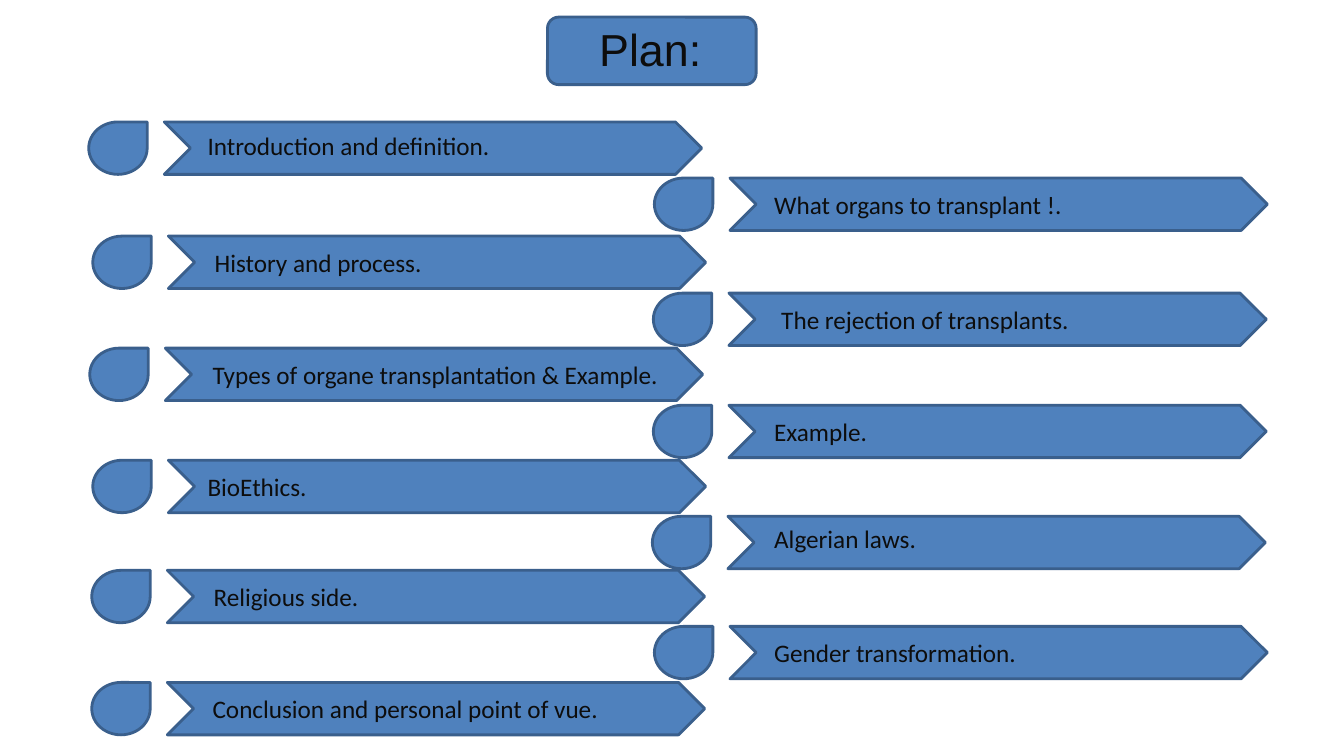
from pptx import Presentation
from pptx.dml.color import RGBColor
from pptx.enum.shapes import MSO_SHAPE
from pptx.enum.text import MSO_ANCHOR, PP_ALIGN
from pptx.util import Inches, Pt

# Content: label, left of row, nudge from the even row step, text left, text drop
TITLE = "Plan:"
ITEMS = [
    ("Introduction and definition.", 0.88, 0, 1.96, 0.03),
    ("What organs to transplant !.", 6.49, 0, 7.58, 0.06),
    ("History and process.", 0.92, 0.02, 2.03, 0.06),
    ("The rejection of transplants.", 6.48, 0.03, 7.65, 0.06),
    ("Types of organe transplantation & Example.", 0.89, 0.02, 2.01, 0.06),
    ("Example.", 6.48, 0.03, 7.58, 0.06),
    ("BioEthics.", 0.92, 0.02, 1.96, 0.06),
    ("Algerian laws.", 6.47, 0.02, 7.58, 0.02),
    ("Religious side.", 0.91, 0, 2.02, 0.06),
    ("Gender transformation.", 6.49, 0, 7.58, 0.06),
    ("Conclusion and personal point of vue.", 0.91, 0, 2.01, 0.06),
]
FILL, EDGE, INK = "4F81BD", "3A5F8C", "0D0D0D"
FIRST, LAST = 1.21, 6.77
STEP = (LAST - FIRST) / (len(ITEMS) - 1)
HIGH, DROP, BAR, SHIFT = 0.52, 0.58, 5.33, 0.75


def color(code):
    return RGBColor.from_string(code)


def shape(slide, kind, *box):
    item = slide.shapes.add_shape(kind, *map(Inches, box))
    item.shadow.inherit = False
    item.fill.solid()
    item.fill.fore_color.rgb = color(FILL)
    item.line.color.rgb = color(EDGE)
    item.line.width = Pt(2)


def label(slide, text, size, font, *box):
    frame = slide.shapes.add_textbox(*map(Inches, box)).text_frame
    frame.word_wrap = True
    frame.text = text
    face = frame.paragraphs[0].runs[0].font
    face.size, face.name = Pt(size), font
    face.color.rgb = color(INK)
    return frame


def main():
    deck = Presentation()
    deck.slide_width, deck.slide_height = Inches(13.33), Inches(7.5)
    slide = deck.slides.add_slide(deck.slide_layouts[6])

    # Plan rows, alternating left and right
    for row, (text, left, nudge, start, drop) in enumerate(ITEMS):
        top = FIRST + row * STEP + nudge
        shape(slide, MSO_SHAPE.TEAR, left, top, DROP, HIGH)
        shape(slide, MSO_SHAPE.CHEVRON, left + SHIFT, top, BAR, HIGH)
        label(slide, text, 18, "Calibri", start, top + drop, 4.75, 0.4)

    # Title
    shape(slide, MSO_SHAPE.ROUNDED_RECTANGLE, 5.43, 0.17, 2.07, 0.67)
    head = label(slide, TITLE, 32, "Arial", 0.7, 0, 11.5, 0.97)
    head.vertical_anchor = MSO_ANCHOR.MIDDLE
    head.paragraphs[0].alignment = PP_ALIGN.CENTER

    deck.save("out.pptx")


if __name__ == "__main__":
    main()
